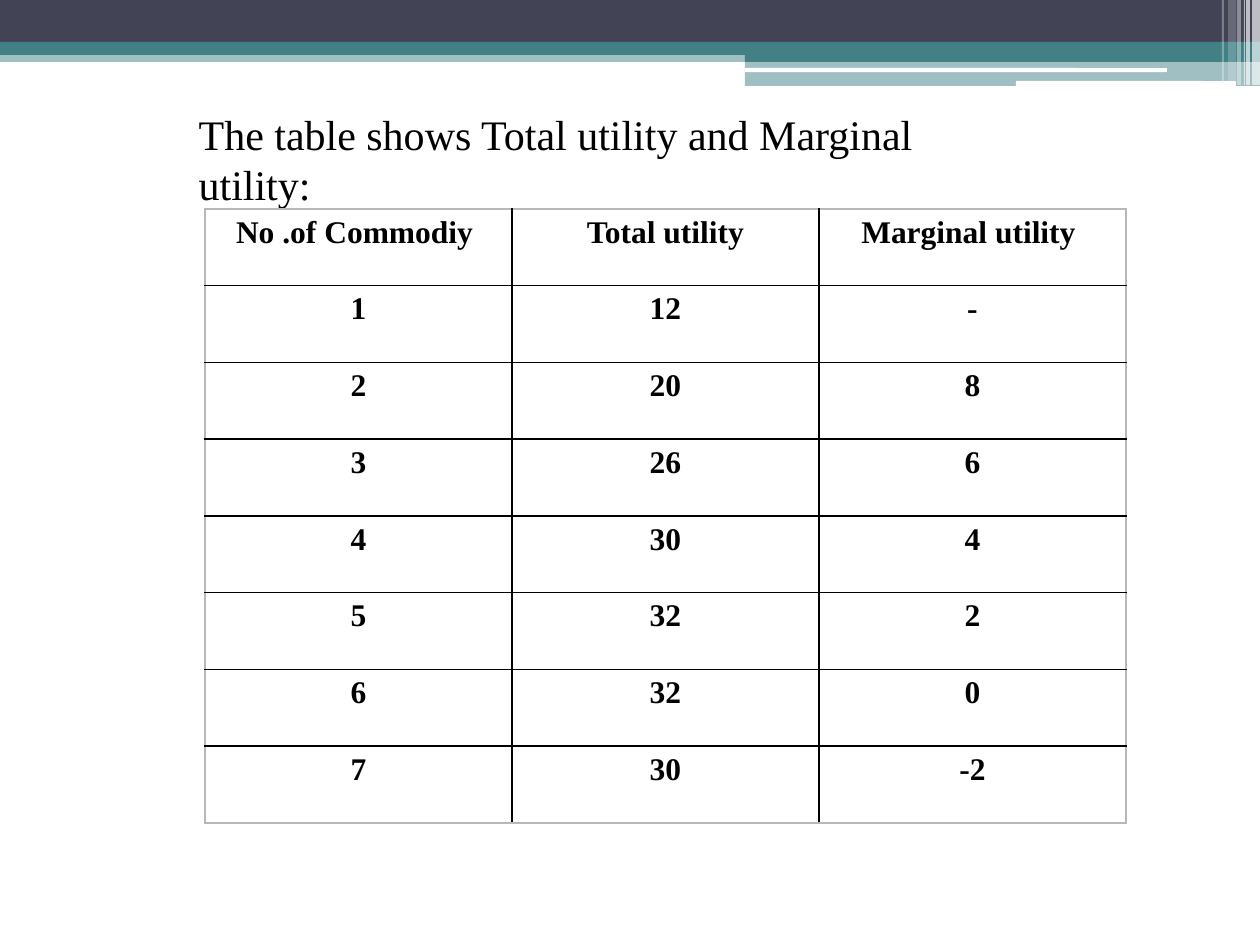
from lxml.etree import SubElement
from pptx import Presentation
from pptx.dml.color import RGBColor
from pptx.enum.shapes import MSO_SHAPE as Shape
from pptx.enum.text import MSO_ANCHOR as Anchor, MSO_AUTO_SIZE as AutoSize, PP_ALIGN as Align
from pptx.oxml.ns import qn
from pptx.util import Emu, Pt

PX_PER_INCH = 126
SLATE = RGBColor(0x42, 0x44, 0x56)
TEAL = RGBColor(0x43, 0x80, 0x86)
WHITE = RGBColor(0xFF, 0xFF, 0xFF)
BLACK = RGBColor(0, 0, 0)
GREY = RGBColor(0xB8, 0xB8, 0xB8)
FONT = "Times New Roman"

# left, top, width, height, colour, opacity in percent
BANDS = [
    (0, 50, 1260, 12, TEAL, 50),
    (0, 0, 1260, 42, SLATE, 100),
    (0, 42, 1260, 13, TEAL, 100),
    (745, 49, 515, 13, TEAL, 100),
    (745, 61, 515, 25, TEAL, 50),
]
WHITE_BARS = [(745, 68, 422, 4), (1016, 81, 220, 5)]
# left, width, height, opacity in percent
STRIPES = [
    (1252, 8, 85, 65), (1246, 4, 85, 65), (1244, 1, 85, 60),
    (1237, 4, 85, 40), (1228, 8, 81, 20), (1222, 2, 81, 30),
]

UTILITY_ROWS = [
    ("No .of Commodiy ", "Total utility", "Marginal utility "),
    ("1", "12", "-"),
    ("2", "20", "8"),
    ("3", "26", "6"),
    ("4", "30", "4"),
    ("5", "32", "2"),
    ("6", "32", "0"),
    ("7", "30", "-2"),
]


def px(length):
    return Emu(round(length * 914400 / PX_PER_INCH))


def write_text(frame, text, size, align=Align.LEFT, bold=False, color=BLACK):
    paragraph = frame.paragraphs[0]
    paragraph.alignment = align
    run = paragraph.add_run()
    run.text = text
    run.font.name = FONT
    run.font.size = Pt(size)
    run.font.bold = bold
    run.font.color.rgb = color


def add_bar(slide, left, top, width, height, color, opacity=100, kind=Shape.RECTANGLE):
    bar = slide.shapes.add_shape(kind, px(left), px(top), px(width), px(height))
    bar.shadow.inherit = False
    bar.fill.solid()
    bar.fill.fore_color.rgb = color
    bar.line.fill.background()
    if opacity < 100:
        fill_color = bar.fill._xPr.find(qn("a:solidFill"))[0]
        SubElement(fill_color, qn("a:alpha"), val=str(opacity * 1000))


def add_header_decoration(slide):
    for band in BANDS:
        add_bar(slide, *band)
    for bar in WHITE_BARS:
        add_bar(slide, *bar, WHITE, kind=Shape.ROUNDED_RECTANGLE)
    for left, width, height, opacity in STRIPES:
        add_bar(slide, left, 0, width, height, WHITE, opacity)


def set_title(slide, text):
    title = slide.shapes.title
    title.left, title.top, title.width, title.height = px(186), px(101), px(759), px(115)
    frame = title.text_frame
    frame.word_wrap = True
    frame.auto_size = AutoSize.NONE
    frame.vertical_anchor = Anchor.MIDDLE
    write_text(frame, text, size=24)


def set_borders(cell, side_colors):
    properties = cell._tc.get_or_add_tcPr()
    for position, (side, color) in enumerate(side_colors.items()):
        line = properties.makeelement(qn(f"a:{side}"), {"w": str(Pt(1))})
        fill = SubElement(line, qn("a:solidFill"))
        SubElement(fill, qn("a:srgbClr"), val=str(color))
        properties.insert(position, line)


def add_utility_table(slide, rows):
    row_count, column_count = len(rows), len(rows[0])
    table = slide.shapes.add_table(
        row_count, column_count, px(205), px(209), px(921), px(614)).table
    table.first_row = table.horz_banding = False
    for r, row in enumerate(rows):
        for c, text in enumerate(row):
            cell = table.cell(r, c)
            cell.fill.background()
            cell.margin_left = cell.margin_right = px(9)
            cell.margin_top = cell.margin_bottom = px(6)
            cell.vertical_anchor = Anchor.TOP
            write_text(cell.text_frame, text, size=18, align=Align.CENTER, bold=True)
            # Grey frame outside, black rules inside
            outer_sides = {
                "lnL": c == 0, "lnR": c == column_count - 1,
                "lnT": r == 0, "lnB": r == row_count - 1,
            }
            set_borders(cell, {side: GREY if outer else BLACK
                               for side, outer in outer_sides.items()})


def main():
    deck = Presentation()
    deck.slide_width, deck.slide_height = px(1260), px(945)
    slide = deck.slides.add_slide(deck.slide_layouts[5])

    add_header_decoration(slide)
    set_title(slide, "The table shows Total utility and Marginal utility:")
    add_utility_table(slide, UTILITY_ROWS)

    deck.save("out.pptx")


if __name__ == "__main__":
    main()
